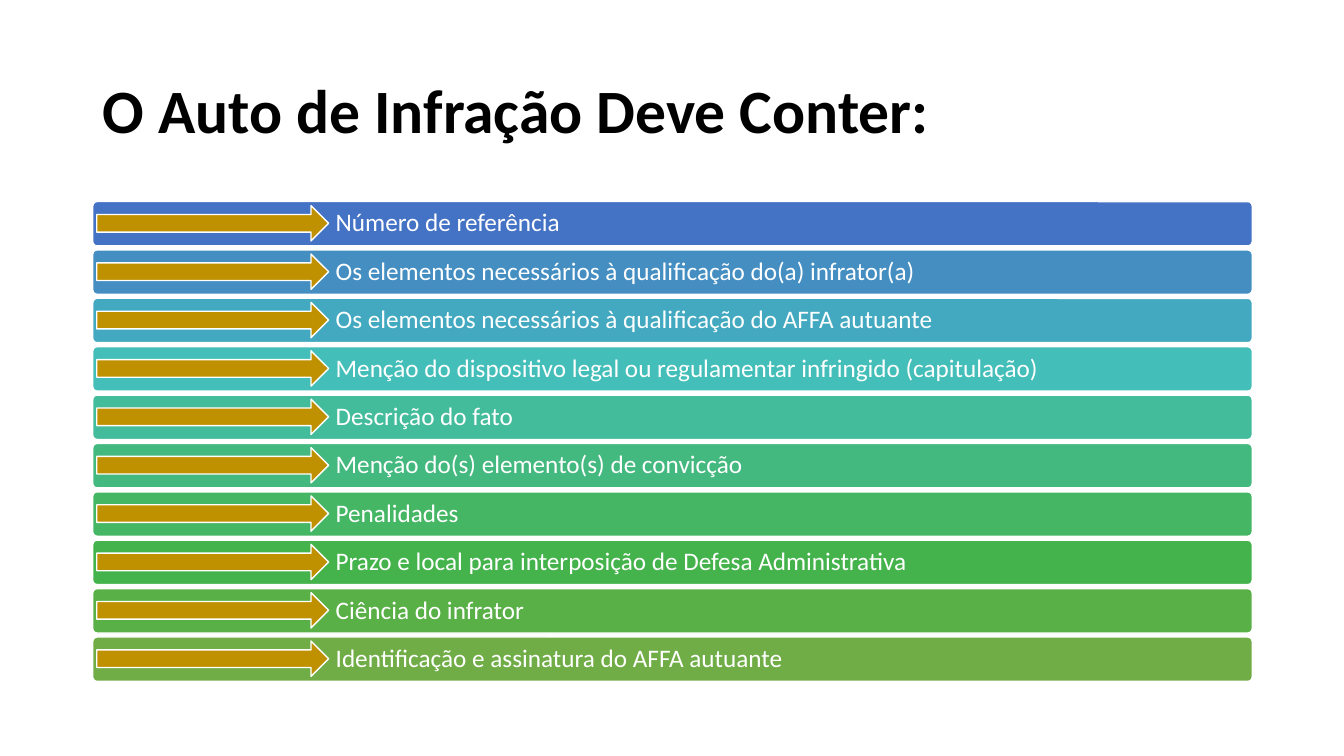
import pptx
import pptx.dml.color
import pptx.enum.shapes
import pptx.enum.text
import pptx.util

RGBColor = pptx.dml.color.RGBColor
MSO_SHAPE = pptx.enum.shapes.MSO_SHAPE
PP_ALIGN = pptx.enum.text.PP_ALIGN

PX = 9144
FONT = "Calibri"
BLACK = RGBColor(0x00, 0x00, 0x00)
WHITE = RGBColor(0xFF, 0xFF, 0xFF)
GOLD = RGBColor(0xBF, 0x90, 0x00)

ITEMS = [
    ("Número de referência", RGBColor(0x44, 0x72, 0xC4)),
    ("Os elementos necessários à qualificação do(a) infrator(a)", RGBColor(0x44, 0x8E, 0xC2)),
    ("Os elementos necessários à qualificação do AFFA autuante", RGBColor(0x43, 0xA9, 0xC0)),
    ("Menção do dispositivo legal ou regulamentar infringido (capitulação)",
     RGBColor(0x43, 0xBE, 0xB9)),
    ("Descrição do fato", RGBColor(0x43, 0xBC, 0x9C)),
    ("Menção do(s) elemento(s) de convicção", RGBColor(0x44, 0xB9, 0x7F)),
    ("Penalidades", RGBColor(0x45, 0xB6, 0x64)),
    ("Prazo e local para interposição de Defesa Administrativa", RGBColor(0x45, 0xB3, 0x4B)),
    ("Ciência do infrator", RGBColor(0x59, 0xB0, 0x46)),
    ("Identificação e assinatura do AFFA autuante", RGBColor(0x70, 0xAD, 0x47)),
]

LEFT, WIDTH = 92, 1150
FIRST_TOP, PITCH, BAR_HEIGHT = 200, 48, 44
ARROW_INSET, ARROW_WIDTH, ARROW_HEIGHT = 4, 230, 35
LABEL_LEFT, LABEL_MARGIN = 326, 7


def px(*lengths):
    return [pptx.util.Emu(n * PX) for n in lengths]


def write_text(tf, text, size, color, bold=False):
    tf.text = text
    tf.word_wrap = True
    tf.auto_size = pptx.enum.text.MSO_AUTO_SIZE.NONE
    tf.vertical_anchor = pptx.enum.text.MSO_ANCHOR.MIDDLE
    p = tf.paragraphs[0]
    p.alignment = PP_ALIGN.LEFT
    p.line_spacing = 0.9
    font = p.runs[0].font
    font.name = FONT
    font.size = pptx.util.Pt(size)
    font.bold = bold
    font.color.rgb = color


def add_title(s, text):
    title = s.shapes.title
    title.left, title.top, title.width, title.height = px(LEFT, 40, WIDTH, 145)
    write_text(title.text_frame, text, 44, BLACK, bold=True)


def add_block(shapes, kind, box, fill):
    sp = shapes.add_shape(kind, *px(*box))
    sp.shadow.inherit = False
    sp.fill.solid()
    sp.fill.fore_color.rgb = fill
    sp.line.color.rgb = WHITE
    sp.line.width = pptx.util.Pt(1)
    return sp


def add_label(shapes, text, box):
    tf = shapes.add_textbox(*px(*box)).text_frame
    margin = px(LABEL_MARGIN)[0]
    tf.margin_left = tf.margin_top = tf.margin_right = tf.margin_bottom = margin
    write_text(tf, text, 18, WHITE)


def add_item(shapes, text, color, top):
    bar = add_block(shapes, MSO_SHAPE.ROUNDED_RECTANGLE, (LEFT, top, WIDTH, BAR_HEIGHT), color)
    bar.adjustments[0] = 0.1
    add_label(shapes, text, (LABEL_LEFT, top, LEFT + WIDTH - LABEL_LEFT, BAR_HEIGHT))
    arrow_box = (LEFT + ARROW_INSET, top + ARROW_INSET, ARROW_WIDTH, ARROW_HEIGHT)
    add_block(shapes, MSO_SHAPE.RIGHT_ARROW, arrow_box, GOLD)


def main():
    prs = pptx.Presentation()
    prs.slide_width, prs.slide_height = px(1333, 750)
    s = prs.slides.add_slide(prs.slide_layouts[5])
    add_title(s, "O Auto de Infração Deve Conter:")
    group = s.shapes.add_group_shape()
    for i, (text, color) in enumerate(ITEMS):
        add_item(group.shapes, text, color, FIRST_TOP + i * PITCH)
    prs.save("out.pptx")


if __name__ == "__main__":
    main()
